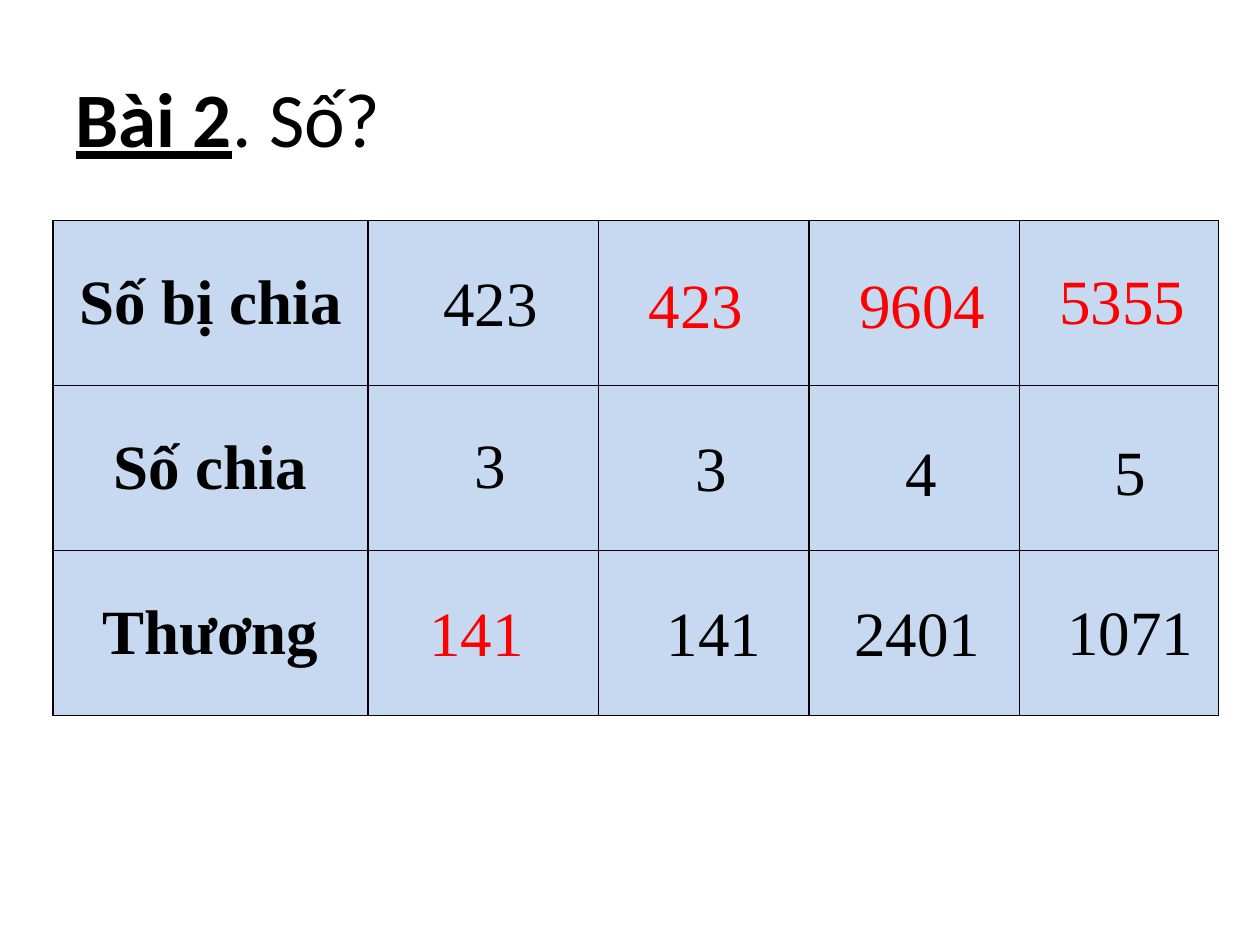
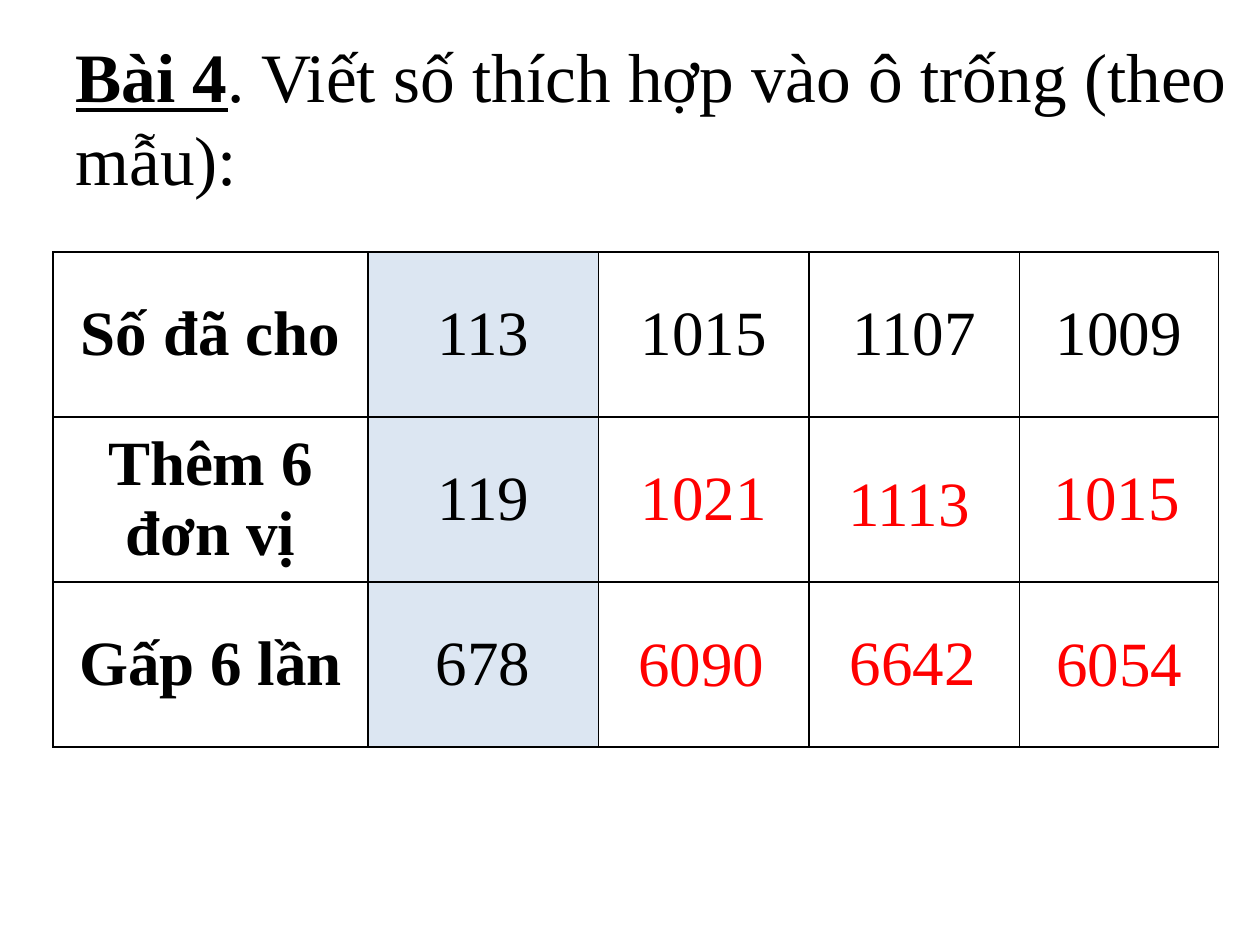
from lxml import etree
from pptx import Presentation
from pptx.dml.color import RGBColor
from pptx.enum.text import MSO_ANCHOR, MSO_AUTO_SIZE, PP_ALIGN
from pptx.oxml.ns import qn
from pptx.util import Inches, Pt

LEFT, CENTER = PP_ALIGN.LEFT, PP_ALIGN.CENTER
MIDDLE = MSO_ANCHOR.MIDDLE
NO_FIT, GROW = MSO_AUTO_SIZE.NONE, MSO_AUTO_SIZE.SHAPE_TO_FIT_TEXT
TITLE_ONLY = 5
SERIF, SANS = "Times New Roman", "Calibri"
BLACK, RED, WHITE = "000000", "FF0000", "FFFFFF"
BLUE, PALE_BLUE = "C6D9F1", "DCE6F2"
COLUMNS = [2.5, 1.83, 1.67, 1.67, 1.58]
ROW_HEIGHT = 1.31
NUMBER_HEIGHT = 0.71


def rgb(value):
    """Turn a hex string into a colour."""
    return RGBColor.from_string(value)


def style(r, size=36, font=SERIF, color=BLACK, bold=False, underline=False):
    """Format one run."""
    r.font.size = Pt(size)
    r.font.name = font
    r.font.bold = bold
    r.font.underline = underline
    r.font.color.rgb = rgb(color)


def add_title(s, box, label, rest, size, font):
    """Fill the title with an underlined exercise label and its task."""
    sp = s.shapes.title
    sp.left, sp.top, sp.width, sp.height = map(Inches, box)
    tf = sp.text_frame
    tf.word_wrap = True
    tf.auto_size = NO_FIT
    tf.vertical_anchor = MIDDLE
    p = tf.paragraphs[0]
    p.text = label
    p.alignment = LEFT
    p.add_run().text = rest
    style(p.runs[0], size, font, bold=True, underline=True)
    style(p.runs[1], size, font)


def add_borders(cell):
    """Draw a thin black line on each side of a cell."""
    tc_pr = cell._tc.get_or_add_tcPr()
    for side in ("a:lnL", "a:lnR", "a:lnT", "a:lnB"):
        line = etree.SubElement(tc_pr, qn(side), w=str(Pt(1)))
        fill = etree.SubElement(line, qn("a:solidFill"))
        etree.SubElement(fill, qn("a:srgbClr"), val=BLACK)


def add_grid(s, left, top, rows, fills):
    """Add the exercise table, with one fill per column."""
    frame = s.shapes.add_table(len(rows), len(COLUMNS), Inches(left), Inches(top),
                               Inches(sum(COLUMNS)), Inches(ROW_HEIGHT * len(rows)))
    table = frame.table
    for column, width in zip(table.columns, COLUMNS):
        column.width = Inches(width)
    for i, texts in enumerate(rows):
        table.rows[i].height = Inches(ROW_HEIGHT)
        for j, fill in enumerate(fills):
            cell = table.cell(i, j)
            add_borders(cell)
            cell.fill.solid()
            cell.fill.fore_color.rgb = rgb(fill)
            cell.vertical_anchor = MIDDLE
            if j < len(texts):
                p = cell.text_frame.paragraphs[0]
                p.text = texts[j]
                p.alignment = CENTER
                style(p.runs[0], bold=j == 0)


def add_numbers(s, left, top, numbers, color, align):
    """Write numbers over the table, at offsets from its corner."""
    for text, x, y, width in numbers:
        sp = s.shapes.add_textbox(Inches(left + x), Inches(top + y),
                                  Inches(width), Inches(NUMBER_HEIGHT))
        tf = sp.text_frame
        tf.word_wrap = True
        tf.auto_size = GROW
        p = tf.paragraphs[0]
        p.text = text
        p.alignment = align
        style(p.runs[0], color=color)


def division_slide(prs):
    """Build exercise 2, on dividends, divisors and quotients."""
    s = prs.slides.add_slide(prs.slide_layouts[TITLE_ONLY])
    add_title(s, (0.5, 0.3, 9, 1.25), "Bài 2", ". Số?", 44, SANS)
    corner = (0.42, 1.75)
    add_grid(s, *corner, [["Số bị chia"], ["Số chia"], ["Thương"]],
             [BLUE] * len(COLUMNS))
    add_numbers(s, *corner, [("423", 3, 0.29, 1.17), ("3", 3.25, 1.58, 1.17)],
                BLACK, LEFT)
    add_numbers(s, *corner, [
        ("3", 4.64, 1.6, 1.17), ("141", 4.66, 2.91, 1.17),
        ("4", 6.31, 1.64, 1.17), ("2401", 6.14, 2.91, 1.44),
        ("5", 7.83, 1.63, 1.44), ("1071", 7.83, 2.9, 1.44),
    ], BLACK, CENTER)
    add_numbers(s, *corner, [
        ("141", 2.89, 2.91, 1.17), ("423", 4.63, 0.31, 1.17),
        ("9604", 6.3, 0.31, 1.28), ("5355", 7.89, 0.28, 1.28),
    ], RED, LEFT)


def fill_in_slide(prs):
    """Build exercise 4, on adding 6 and multiplying by 6."""
    s = prs.slides.add_slide(prs.slide_layouts[TITLE_ONLY])
    add_title(s, (0.5, 0.3, 9.42, 1.25), "Bài 4",
              ". Viết số thích hợp vào ô trống (theo mẫu):", 39.6, SERIF)
    corner = (0.42, 2)
    add_grid(s, *corner, [
        ["Số đã cho", "113", "1015", "1107", "1009"],
        ["Thêm 6 đơn vị", "119"],
        ["Gấp 6 lần", "678"],
    ], [WHITE, PALE_BLUE, WHITE, WHITE, WHITE])
    add_numbers(s, *corner, [
        ("1021", 4.5, 1.58, 1.33), ("6090", 4.48, 2.9, 1.33),
        ("6642", 6.16, 2.89, 1.33), ("1113", 6.13, 1.63, 1.33),
        ("1015", 7.78, 1.58, 1.33), ("6054", 7.8, 2.9, 1.33),
    ], RED, CENTER)


def main():
    """Build and save both exercises."""
    prs = Presentation()
    prs.slide_width, prs.slide_height = Inches(10), Inches(7.5)
    division_slide(prs)
    fill_in_slide(prs)
    prs.save("out.pptx")


if __name__ == "__main__":
    main()
